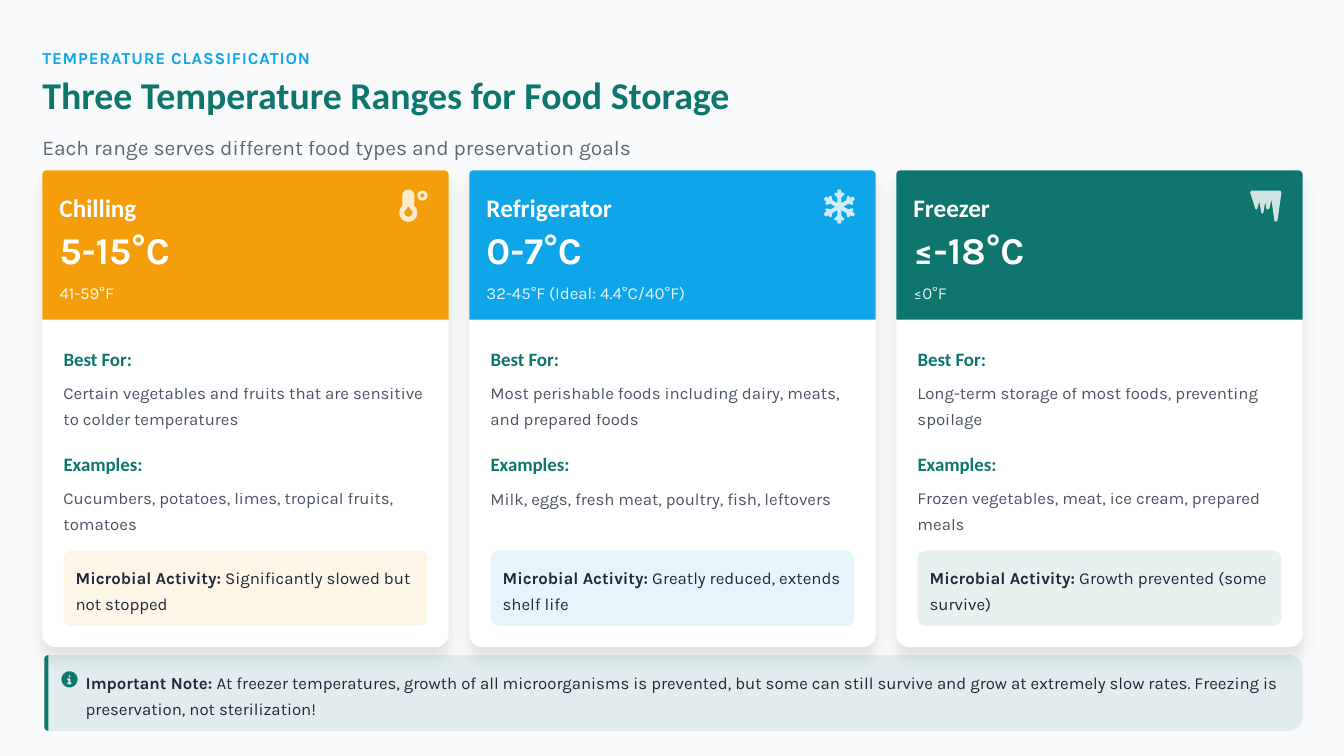
from math import cos, radians, sin
from lxml.etree import SubElement
from pptx import Presentation
from pptx.dml.color import RGBColor
from pptx.enum.shapes import MSO_SHAPE
from pptx.enum.text import MSO_ANCHOR, MSO_AUTO_SIZE, PP_ALIGN
from pptx.oxml.ns import qn
from pptx.util import Inches, Pt

# Content
KICKER = "TEMPERATURE CLASSIFICATION"
TITLE = "Three Temperature Ranges for Food Storage"
SUBTITLE = "Each range serves different food types and preservation goals"
CARDS = [
    dict(name="Chilling", name_width=0.96, color="amber", celsius="5-15°C", fahrenheit="41-59°F",
         best="Certain vegetables and fruits that are sensitive to colder temperatures",
         examples="Cucumbers, potatoes, limes, tropical fruits, tomatoes", examples_height=0.5,
         activity=" Significantly slowed but not stopped"),
    dict(name="Refrigerator", name_width=1.45, color="sky", celsius="0-7°C",
         fahrenheit="32-45°F (Ideal: 4.4°C/40°F)",
         best="Most perishable foods including dairy, meats, and prepared foods",
         examples="Milk, eggs, fresh meat, poultry, fish, leftovers", examples_height=0.25,
         activity=" Greatly reduced, extends shelf life"),
    dict(name="Freezer", name_width=0.96, color="teal", celsius="≤-18°C", fahrenheit="≤0°F",
         best="Long-term storage of most foods, preventing spoilage",
         examples="Frozen vegetables, meat, ice cream, prepared meals", examples_height=0.5,
         activity=" Growth prevented (some survive)"),
]
NOTE = ("Important Note:", " At freezer temperatures, growth of all microorganisms is prevented, "
        "but some can still survive and grow at extremely slow rates. "
        "Freezing is preservation, not sterilization!")

# Theme
THEME = dict(
    colors=dict(page="F8FAFC", ink="1E293B", white="FFFFFF", amber="F59E0B", sky="0EA5E9", teal="0F766E"),
    styles=dict(
        kicker=dict(font="Karla", size=12, bold=True, color="sky", spacing=1.3),
        title=dict(font="Calibri", size=27, bold=True, color="teal", spacing=0.9),
        subtitle=dict(font="Karla", size=15, bold=False, color="ink", spacing=1.2, alpha=70),
        name=dict(font="Calibri", size=18, bold=True, color="white", spacing=1.1),
        celsius=dict(font="Karla", size=27, bold=True, color="white", spacing=0.9),
        fahrenheit=dict(font="Karla", size=12, bold=False, color="white", spacing=1.3, alpha=90),
        heading=dict(font="Calibri", size=13.5, bold=True, color="teal", spacing=1.3),
        body=dict(font="Karla", size=12, bold=False, color="ink", spacing=1.3, alpha=80),
        remark=dict(font="Karla", size=12, bold=False, color="ink", spacing=1.3),
    ),
)
LEFT, RIGHT, CARD_TOP = 0.42, 12.92, 1.69
CARD_WIDTH, CARD_HEIGHT, HEADER_HEIGHT = 4.03, 4.73, 1.48
PITCH = (RIGHT - LEFT - CARD_WIDTH) / (len(CARDS) - 1)

deck = Presentation()
deck.slide_width, deck.slide_height = Inches(13.33), Inches(7.5)
page = deck.slides.add_slide(deck.slide_layouts[5])


def rgb(name):
    return RGBColor.from_string(THEME["colors"][name])


def fade(shape, alpha):
    for color in shape.element.xpath(".//a:srgbClr"):
        SubElement(color, qn("a:alpha"), val=str(alpha * 1000))


def write(spans, style_name, left, top, width, height, box=None):
    """Fill a text box; when there are two spans the first is bold."""
    style = THEME["styles"][style_name]
    box = box or page.shapes.add_textbox(0, 0, 0, 0)
    box.left, box.top, box.width, box.height = map(Inches, (left, top, width, height))
    frame = box.text_frame
    frame_format = dict(margin_left=0, margin_right=0, margin_top=0, margin_bottom=0, word_wrap=True,
                        auto_size=MSO_AUTO_SIZE.NONE, vertical_anchor=MSO_ANCHOR.MIDDLE)
    for key, value in frame_format.items():
        setattr(frame, key, value)
    para = frame.paragraphs[0]
    para.alignment, para.line_spacing = PP_ALIGN.LEFT, style["spacing"]
    for index, text in enumerate(spans):
        span = para.add_run()
        span.text = text
        bold = style["bold"] or index < len(spans) - 1
        for key, value in dict(name=style["font"], size=Pt(style["size"]), bold=bold).items():
            setattr(span.font, key, value)
        span.font.color.rgb = rgb(style["color"])
    if "alpha" in style:
        fade(box, style["alpha"])
    return box


def paint(shape, color, alpha=100):
    shape.shadow.inherit = False
    shape.fill.solid()
    shape.fill.fore_color.rgb = rgb(color)
    shape.line.fill.background()
    if alpha < 100:
        fade(shape, alpha)
    return shape


def panel(kind, left, top, width, height, radii, color, alpha=100):
    shape = page.shapes.add_shape(kind, *map(Inches, (left, top, width, height)))
    for index, radius in enumerate(radii):
        shape.adjustments[index] = radius / min(width, height)
    return paint(shape, color, alpha)


def arc(x, y, radius, start=0, end=360, steps=24):
    """Points clockwise on screen; 0 degrees points right."""
    angles = [radians(start + (end - start) * step / steps) for step in range(steps + 1)]
    return [(x + radius * cos(angle), y + radius * sin(angle)) for angle in angles]


def outline(contours, left, top, color, alpha=100):
    """Draw closed contours as one shape; inner contours are holes."""
    contours = [[(Inches(left + x), Inches(top + y)) for x, y in points] for points in contours]
    builder = page.shapes.build_freeform(*contours[0][0])
    for index, points in enumerate(contours):
        if index:
            builder.move_to(*points[0])
        builder.add_line_segments(points[1:], close=True)
    return paint(builder.convert_to_shape(), color, alpha)


def add_shadow(shape):
    effects = shape.element.spPr.find(qn("a:effectLst"))
    shadow = SubElement(effects, qn("a:outerShdw"), blurRad=str(Pt(11.2)), dist=str(Pt(7.5)),
                        dir="5400000", algn="ctr", rotWithShape="0")
    color = SubElement(shadow, qn("a:srgbClr"), val="000000")
    SubElement(color, qn("a:alpha"), val="10000")


# Icons, measured from the top left of a 0.31 inch square
def snowflake():
    half = [(-0.02, 0.04), (-0.02, 0.09), (-0.05, 0.12), (-0.05, 0.13), (-0.03, 0.14),
            (-0.02, 0.13), (-0.02, 0.16), (-0.01, 0.17)]
    arm = half + [(-across, out) for across, out in reversed(half)]
    turns = [radians(60 * turn) for turn in range(6)]
    return [[(0.16 + across * cos(turn) + out * sin(turn), 0.16 + across * sin(turn) - out * cos(turn))
             for turn in turns for across, out in arm]]


thermometer = [
    arc(0.12, 0.05, 0.06, 180, 360) + arc(0.12, 0.22, 0.09, -50, 230),
    arc(0.12, 0.22, 0.04, -60, 240) + arc(0.12, 0.17, 0.01, 180, 360),
    arc(0.26, 0.05, 0.05), arc(0.26, 0.05, 0.02),
]
icicles = [[(0, 0.02), (0.01, 0), (0.3, 0), (0.31, 0.02), (0.27, 0.3), (0.25, 0.31), (0.24, 0.3),
            (0.21, 0.09), (0.19, 0.18), (0.17, 0.19), (0.16, 0.18), (0.15, 0.11), (0.13, 0.22),
            (0.12, 0.23), (0.11, 0.22), (0.09, 0.11), (0.07, 0.18), (0.06, 0.19), (0.05, 0.18)]]
info = [arc(0.09, 0.08, 0.08), arc(0.09, 0.05, 0.01),
        [(0.07, 0.07), (0.1, 0.07), (0.1, 0.11), (0.11, 0.11), (0.11, 0.13), (0.07, 0.13),
         (0.07, 0.11), (0.08, 0.11), (0.08, 0.09), (0.07, 0.09)]]

# Heading
page.background.fill.solid()
page.background.fill.fore_color.rgb = rgb("page")
write([TITLE], "title", LEFT, 0.75, 12.69, 0.42, page.shapes.title)
kicker = write([KICKER], "kicker", LEFT, 0.42, 12.58, 0.25)
kicker.element.xpath(".//a:rPr")[0].set("spc", "60")
write([SUBTITLE], "subtitle", LEFT, 1.29, 12.6, 0.29)

# Cards
for index, (card, icon) in enumerate(zip(CARDS, (thermometer, snowflake(), icicles))):
    left = LEFT + index * PITCH
    head, inner = left + 0.17, left + 0.21
    add_shadow(panel(MSO_SHAPE.ROUND_2_SAME_RECTANGLE, left, CARD_TOP, CARD_WIDTH, CARD_HEIGHT,
                     (0.04, 0.13), "white"))
    panel(MSO_SHAPE.ROUND_2_SAME_RECTANGLE, left, CARD_TOP, CARD_WIDTH, HEADER_HEIGHT,
          (0.04, 0), card["color"])
    write([card["name"]], "name", head, 1.88, card["name_width"], 0.33)
    outline(icon, left + 3.51, 1.89, "white", 80)
    write([card["celsius"]], "celsius", head, 2.29, 3.89, 0.42)
    write([card["fahrenheit"]], "fahrenheit", head, 2.75, 3.78, 0.25)
    sections = [("Best For:", card["best"], 3.38, 0.5),
                ("Examples:", card["examples"], 4.42, card["examples_height"])]
    for heading, body, top, height in sections:
        write([heading], "heading", inner, top, 3.71, 0.29)
        write([body], "body", inner, top + 0.37, 3.7, height)
    panel(MSO_SHAPE.ROUNDED_RECTANGLE, inner, 5.46, 3.61, 0.75, (0.08,), card["color"], 10)
    write(["Microbial Activity:", card["activity"]], "remark", left + 0.33, 5.58, 3.45, 0.5)

# Important note
note_left, note_top, note_width, note_height = 0.44, 6.5, 12.48, 0.75
left_corners = (arc(0.04, note_height - 0.04, 0.04, 90, 180, 6) + arc(0.04, 0.04, 0.04, 180, 270, 6))
right_corners = (arc(note_width - 0.13, 0.13, 0.13, 270, 360, 8)
                 + arc(note_width - 0.13, note_height - 0.13, 0.13, 0, 90, 8))
outline([left_corners + right_corners], note_left, note_top, "teal", 10)
outline([left_corners], note_left, note_top, "teal")
outline(info, 0.6, 6.66, "teal")
write(NOTE, "remark", 0.85, 6.62, 12.02, 0.5)

deck.save("out.pptx")
